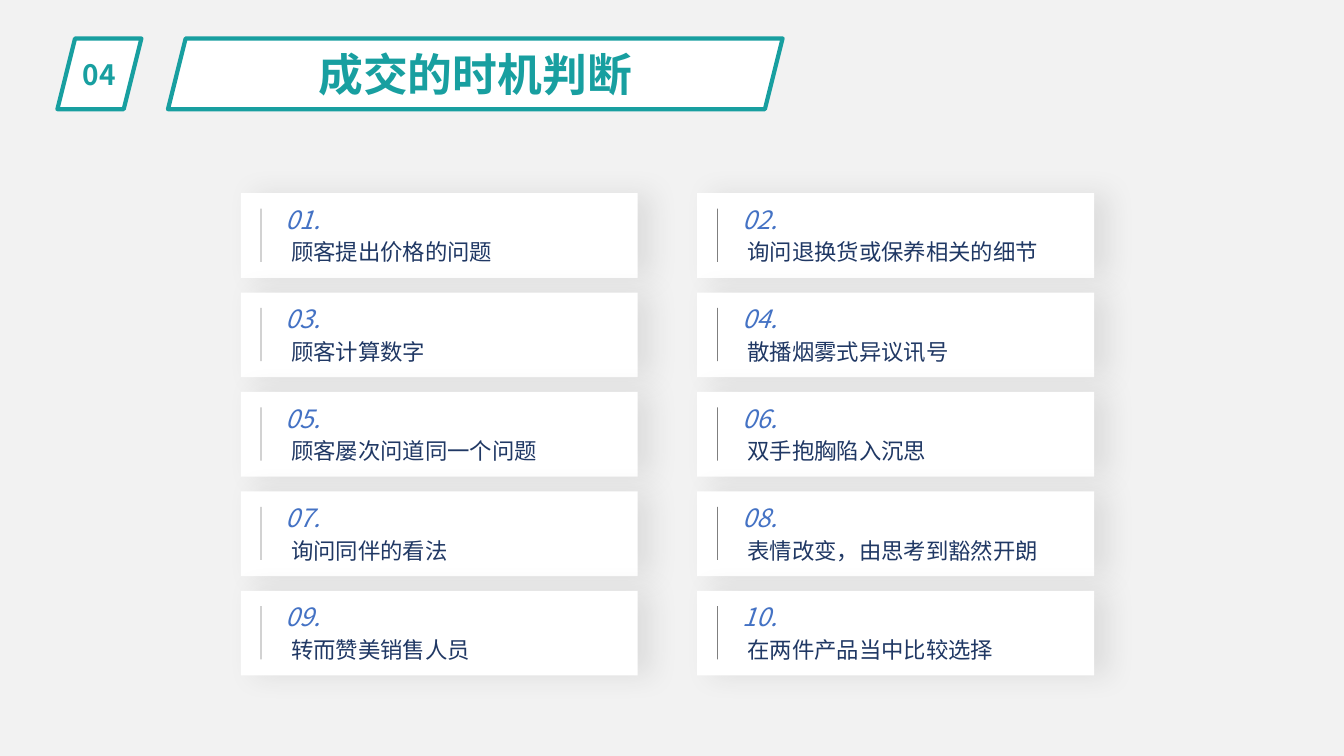
from lxml import etree
from pptx import Presentation
from pptx import util as u
from pptx.dml.color import RGBColor
from pptx.enum import shapes, text
from pptx.oxml import ns

PX = 6350  # 144 px to the inch
FONT = "Noto Sans CJK SC"
TEAL, BLUE, NAVY = "189FA0", "4472C4", "203864"
WHITE, BLACK, GREY, SHADE = "FFFFFF", "000000", "F2F2F2", "262626"


def rgb(value):
    return RGBColor.from_string(value)


def px(*lengths):
    return [u.Emu(length * PX) for length in lengths]


def child(parent, tag, **attributes):
    return etree.SubElement(parent, ns.qn(tag), {k: str(v) for k, v in attributes.items()})


class Slide:
    def __init__(self, deck, background):
        self.page = deck.slides.add_slide(deck.slide_layouts[6])
        fill = self.page.background.fill
        fill.solid()
        fill.fore_color.rgb = rgb(background)

    def add_words(self, box, words, size, color, align, spacing=1.0, **styles):
        """Put one styled paragraph into a shape."""
        para = box.text_frame.paragraphs[0]
        para.alignment = align
        para.line_spacing = spacing
        span = para.add_run()
        span.text = words
        for name, value in {"name": FONT, "size": u.Pt(size), **styles}.items():
            setattr(span.font, name, value)
        span.font.color.rgb = rgb(color)
        latin = span._r.rPr.find(ns.qn("a:latin"))
        latin.addnext(etree.Element(ns.qn("a:ea"), {"typeface": FONT}))

    def shape(self, kind, *place):
        box = self.page.shapes.add_shape(kind, *px(*place))
        box.shadow.inherit = False
        box.fill.solid()
        box.fill.fore_color.rgb = rgb(WHITE)
        box.line.fill.background()
        return box

    def banner(self, place, words, size):
        box = self.shape(shapes.MSO_SHAPE.PARALLELOGRAM, *place)
        box.line.color.rgb = rgb(TEAL)
        box.line.width = u.Pt(3)
        box.text_frame.vertical_anchor = text.MSO_ANCHOR.MIDDLE
        self.add_words(box, words, size, TEAL, text.PP_ALIGN.CENTER, bold=True)

    def panel(self, *place):
        """White rectangle with a soft shadow to the right."""
        box = self.shape(shapes.MSO_SHAPE.RECTANGLE, *place)
        effects = box._element.spPr.find(ns.qn("a:effectLst"))
        shadow = child(effects, "a:outerShdw", blurRad=u.Pt(20), dist=u.Pt(10),
                       dir=0, algn="l", rotWithShape=0)
        color = child(shadow, "a:srgbClr", val=SHADE)
        child(color, "a:alpha", val=10000)

    def label(self, place, words, size, color, align, wrap, **styles):
        box = self.page.shapes.add_textbox(*px(*place))
        frame = {"word_wrap": wrap, "auto_size": text.MSO_AUTO_SIZE.SHAPE_TO_FIT_TEXT}
        for name, value in frame.items():
            setattr(box.text_frame, name, value)
        self.add_words(box, words, size, color, align, spacing=1.2, **styles)

    def rule(self, *ends):
        """Thin half-transparent line."""
        line = self.page.shapes.add_connector(shapes.MSO_CONNECTOR.STRAIGHT, *px(*ends))
        line.line.width = u.Pt(0.5)
        line.line.color.rgb = rgb(BLACK)
        child(line._element.spPr.find(".//" + ns.qn("a:srgbClr")), "a:alpha", val=50000)
        child(line._element.spPr, "a:effectLst")

    def card(self, x, y, number, words):
        self.panel(x, y, 567, 121)
        self.label((x + 49, y, 81, 62), f"{number:02}.", 18, BLUE,
                   text.PP_ALIGN.CENTER, False, italic=True)
        self.label((x + 58, y + 50, 481, 58), words, 16, NAVY, text.PP_ALIGN.LEFT, True)
        self.rule(x + 29, y + 98, x + 29, y + 22)


SIGNALS = [
    "顾客提出价格的问题", "询问退换货或保养相关的细节",
    "顾客计算数字", "散播烟雾式异议讯号",
    "顾客屡次问道同一个问题", "双手抱胸陷入沉思",
    "询问同伴的看法", "表情改变，由思考到豁然开朗",
    "转而赞美销售人员", "在两件产品当中比较选择",
]


def main():
    deck = Presentation()
    deck.slide_width, deck.slide_height = px(1920, 1080)
    slide = Slide(deck, GREY)

    # Heading
    slide.banner((82, 55, 120, 101), "04", 20)
    slide.banner((240, 55, 878, 101), "成交的时机判断", 32)

    # Two columns of cards, numbered row by row
    for index, words in enumerate(SIGNALS):
        row, column = divmod(index, 2)
        slide.card(344 + 652 * column, 276 + 142 * row, index + 1, words)

    deck.save("out.pptx")


if __name__ == "__main__":
    main()
